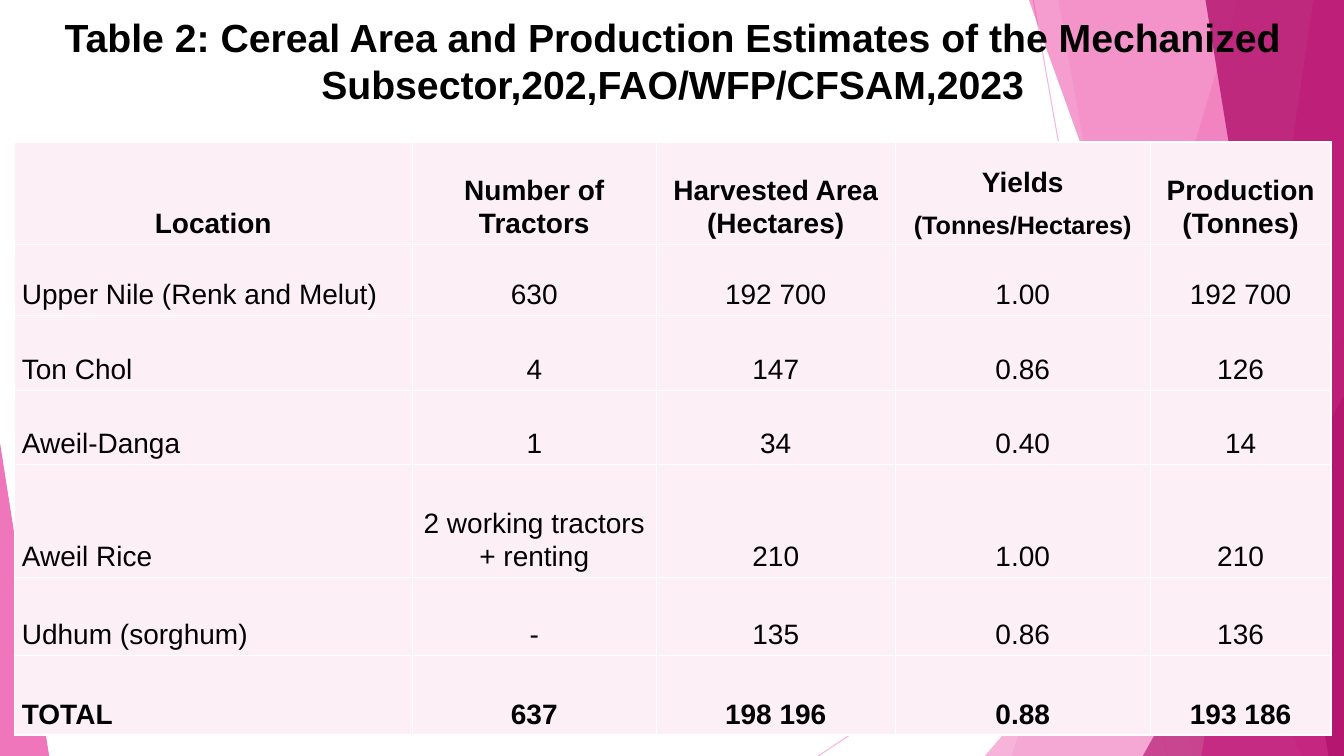
from dataclasses import dataclass

from lxml.etree import SubElement
from pptx import Presentation
from pptx.dml.color import RGBColor
from pptx.enum.shapes import MSO_CONNECTOR, MSO_SHAPE
from pptx.enum.text import MSO_ANCHOR, PP_ALIGN
from pptx.oxml.ns import qn
from pptx.util import Cm, Pt


@dataclass(frozen=True)
class Theme:
    font: str = "Arial"
    ink: str = "000000"
    pale_pink: str = "F496CB"
    pink: str = "EB3D9F"
    magenta: str = "B2136D"
    cell: str = "FDEFF6"
    border: str = "FFFFFF"
    title_size: int = 28
    body_size: int = 20
    unit_size: int = 18


theme = Theme()
WIDTH, HEIGHT = 33.87, 19.05


def paint(color_format, color, opacity):
    color_format.rgb = RGBColor.from_string(color)
    for srgb in color_format._xFill.iter(qn("a:srgbClr")):
        SubElement(srgb, qn("a:alpha"), val=str(opacity * 1000))


def write(paragraph, text, size, bold):
    run = paragraph.add_run()
    run.text = text
    run.font.name = theme.font
    run.font.size = Pt(size)
    run.font.bold = bold
    run.font.color.rgb = RGBColor.from_string(theme.ink)


prs = Presentation()
prs.slide_width = Cm(WIDTH)
prs.slide_height = Cm(HEIGHT)
slide = prs.slides.add_slide(prs.slide_layouts[6])

for x1, y1, x2, y2 in [(26.04, 0, 29.41, HEIGHT), (WIDTH, 10.24, 20.62, HEIGHT)]:
    ray = slide.shapes.add_connector(
        MSO_CONNECTOR.STRAIGHT, Cm(x1), Cm(y1), Cm(x2), Cm(y2)
    )
    ray.line.width = Pt(0.75)
    ray.line.fill.solid()
    paint(ray.line.fill.fore_color, theme.pale_pink, 70)
    SubElement(ray._element.spPr, qn("a:effectLst"))

facets = [
    ("band", (31.19, 25.5), theme.pale_pink, 36),
    ("band", (26.67, 30.05), theme.pale_pink, 20),
    ("triangle", (24.82, 8.46, 9.05, 1), theme.pale_pink, 72),
    ("band", (25.93, 32.79), theme.pink, 50),
    ("band", (33.1, 30.28), theme.pink, 70),
    ("band", (30.38, 33.48), theme.magenta, 80),
    ("triangle", (28.8, 9.98, 5.07, 1), theme.magenta, 66),
    ("triangle", (0, 11.15, 1.24, 0), theme.pink, 70),
]
for kind, geometry, color, opacity in facets:
    if kind == "band":
        top_x, bottom_x = geometry
        outline = slide.shapes.build_freeform(Cm(top_x), Cm(0))
        outline.add_line_segments(
            [(Cm(WIDTH), Cm(0)), (Cm(WIDTH), Cm(HEIGHT)), (Cm(bottom_x), Cm(HEIGHT))]
        )
        facet = outline.convert_to_shape()
    else:
        left, top, width, apex = geometry
        facet = slide.shapes.add_shape(
            MSO_SHAPE.ISOSCELES_TRIANGLE, Cm(left), Cm(top), Cm(width), Cm(HEIGHT - top)
        )
        facet.adjustments[0] = apex
    facet.shadow.inherit = False
    facet.line.fill.background()
    facet.fill.solid()
    paint(facet.fill.fore_color, color, opacity)

title = slide.shapes.add_textbox(Cm(0.36), Cm(0.2), Cm(33.18), Cm(3.12)).text_frame
title.word_wrap = True
title.vertical_anchor = MSO_ANCHOR.TOP
heading = title.paragraphs[0]
heading.alignment = PP_ALIGN.CENTER
write(
    heading,
    "Table 2: Cereal Area and Production Estimates of the Mechanized "
    "Subsector,202,FAO/WFP/CFSAM,2023",
    theme.title_size,
    True,
)

estimates = [
    ("Location", "Number of Tractors", "Harvested Area (Hectares)",
     "Yields\n(Tonnes/Hectares)", "Production (Tonnes)"),
    ("Upper Nile (Renk and Melut)", "630", "192 700", "1.00", "192 700"),
    ("Ton Chol", "4", "147", "0.86", "126"),
    ("Aweil-Danga", "1", "34", "0.40", "14"),
    ("Aweil Rice", "2 working tractors + renting", "210", "1.00", "210"),
    ("Udhum (sorghum)", "-", "135", "0.86", "136"),
    ("TOTAL", "637", "198 196", "0.88", "193 186"),
]
column_widths = [10.03, 6.15, 6.02, 6.43, 4.55]
row_heights = [2.59, 1.78, 1.88, 1.88, 2.84, 1.96, 2.01]
table = slide.shapes.add_table(
    len(estimates), len(column_widths), Cm(0.36), Cm(3.58),
    Cm(sum(column_widths)), Cm(sum(row_heights)),
).table
for column, width in zip(table.columns, column_widths):
    column.width = Cm(width)
for row, height in zip(table.rows, row_heights):
    row.height = Cm(height)

for r, record in enumerate(estimates):
    for c, entry in enumerate(record):
        cell = table.cell(r, c)
        cell.vertical_anchor = MSO_ANCHOR.BOTTOM
        cell.margin_left = cell.margin_right = Cm(0.19)
        for side in ("a:lnL", "a:lnR", "a:lnT", "a:lnB"):
            border = SubElement(cell._tc.get_or_add_tcPr(), qn(side), w=str(Pt(1)))
            border_fill = SubElement(border, qn("a:solidFill"))
            SubElement(border_fill, qn("a:srgbClr"), val=theme.border)
        cell.fill.solid()
        cell.fill.fore_color.rgb = RGBColor.from_string(theme.cell)
        for i, text in enumerate(entry.split("\n")):
            frame = cell.text_frame
            paragraph = frame.add_paragraph() if i else frame.paragraphs[0]
            paragraph.alignment = PP_ALIGN.LEFT if c == 0 and r else PP_ALIGN.CENTER
            paragraph.line_spacing = 1.07
            paragraph.space_after = Pt(8)
            size = theme.unit_size if i else theme.body_size
            write(paragraph, text, size, r in (0, len(estimates) - 1))

prs.save("out.pptx")
